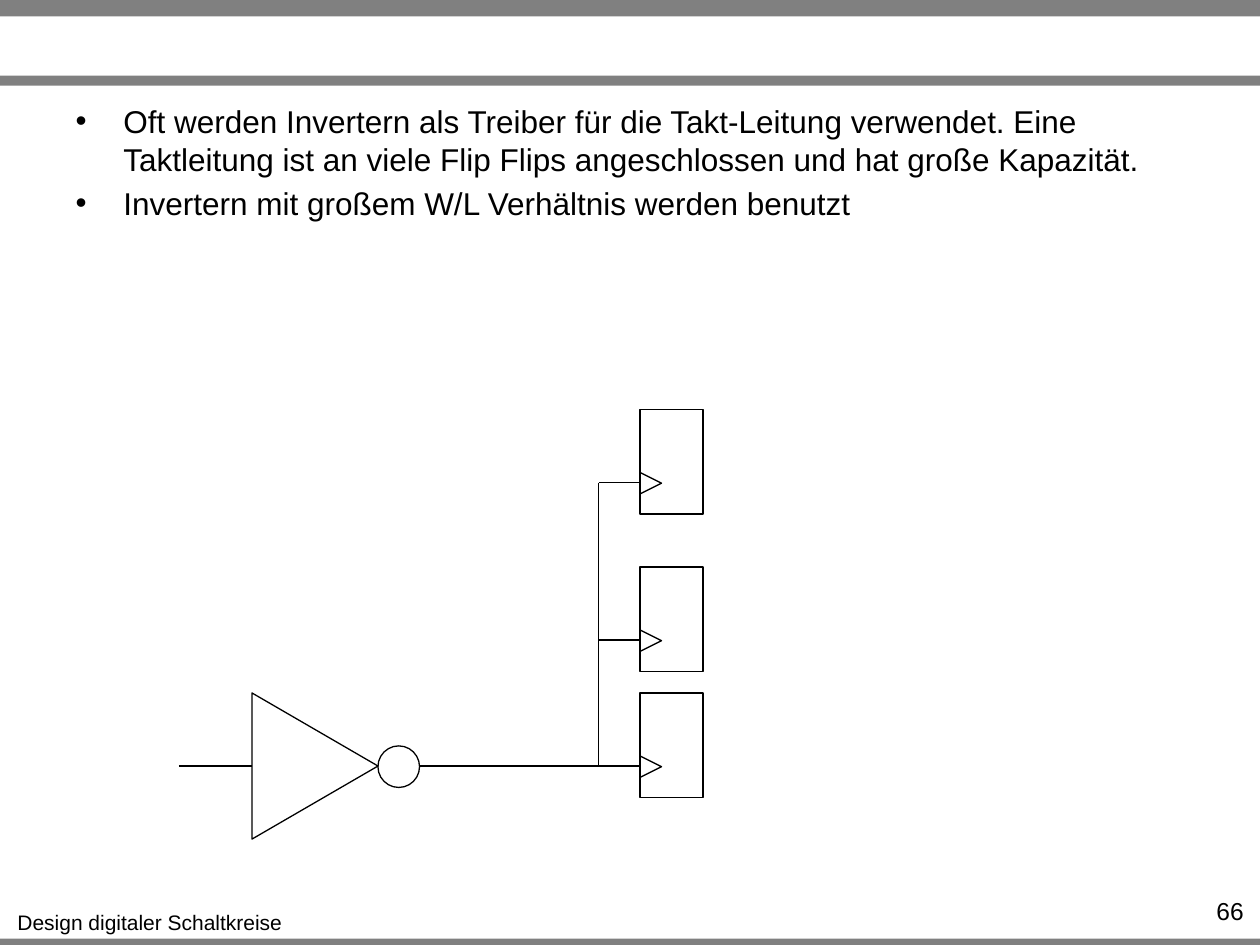
from dataclasses import dataclass

from lxml import etree
from pptx import Presentation
from pptx.dml.color import RGBColor
from pptx.enum.shapes import MSO_CONNECTOR, MSO_SHAPE
from pptx.enum.text import MSO_ANCHOR, MSO_AUTO_SIZE, PP_ALIGN
from pptx.oxml.ns import qn
from pptx.util import Inches, Pt

RECTANGLE, TRIANGLE, OVAL = MSO_SHAPE.RECTANGLE, MSO_SHAPE.ISOSCELES_TRIANGLE, MSO_SHAPE.OVAL
STRAIGHT = MSO_CONNECTOR.STRAIGHT
CENTER, RIGHT = PP_ALIGN.CENTER, PP_ALIGN.RIGHT
TOP = MSO_ANCHOR.TOP
NO_FIT = MSO_AUTO_SIZE.NONE


@dataclass(frozen=True)
class Theme:
    font: str = "Arial"
    ink: RGBColor = RGBColor(0, 0, 0)
    paper: RGBColor = RGBColor(255, 255, 255)
    bar: RGBColor = RGBColor(128, 128, 128)
    body: Pt = Pt(18)
    number: Pt = Pt(14)
    footer: Pt = Pt(12)
    stroke: Pt = Pt(0.75)


theme = Theme()


def add_outline(parent, kind, left, top, width, height, fill=None):
    outline = parent.add_shape(kind, Inches(left), Inches(top), Inches(width), Inches(height))
    outline.shadow.inherit = False
    outline.line.color.rgb = theme.ink
    outline.line.width = theme.stroke
    if fill is None:
        outline.fill.background()
    else:
        outline.fill.solid()
        outline.fill.fore_color.rgb = fill
    return outline


def add_wire(x1, y1, x2, y2):
    wire = slide.shapes.add_connector(STRAIGHT, Inches(x1), Inches(y1), Inches(x2), Inches(y2))
    wire.line.color.rgb = theme.ink
    wire.line.width = theme.stroke
    etree.SubElement(wire._element.spPr, qn("a:effectLst"))


prs = Presentation()
prs.slide_width, prs.slide_height = Inches(10), Inches(7.5)
slide = prs.slides.add_slide(prs.slide_layouts[1])
title = slide.shapes.title._element
title.getparent().remove(title)

for top, height in ((7.45, 0.08), (0, 0.13), (0.6, 0.08)):
    bar = add_outline(slide.shapes, RECTANGLE, 0, top, 10, height, theme.bar)
    bar.line.fill.background()

explanation = slide.placeholders[1]
explanation.left, explanation.top = Inches(0.5), Inches(0.76)
explanation.width, explanation.height = Inches(9), Inches(1.41)
explanation.text_frame.text = (
    "Oft werden Invertern als Treiber für die Takt-Leitung verwendet. Eine "
    "Taktleitung ist an viele Flip Flips angeschlossen und hat große Kapazität.\n"
    "Invertern mit großem W/L Verhältnis werden benutzt"
)
explanation.text_frame.auto_size = NO_FIT
explanation.text_frame.vertical_anchor = TOP
for point in explanation.text_frame.paragraphs:
    indents = point._p.get_or_add_pPr()
    indents.set("marL", str(Inches(0.38)))
    indents.set("indent", str(Inches(-0.38)))

course = slide.shapes.add_textbox(Inches(0.03), Inches(7.17), Inches(2.32), Inches(0.3))
course.text_frame.text = "Design digitaler Schaltkreise"
course.text_frame.word_wrap = False
course.text_frame.paragraphs[0].alignment = CENTER

page = slide.shapes.add_textbox(Inches(9.1), Inches(7.06), Inches(0.87), Inches(0.24))
page.text_frame.text = "66"
page.text_frame.word_wrap = True
page.text_frame.paragraphs[0].alignment = RIGHT

for wording, size in ((explanation, theme.body), (course, theme.footer), (page, theme.number)):
    for paragraph in wording.text_frame.paragraphs:
        for run in paragraph.runs:
            run.font.name = theme.font
            run.font.size = size
            run.font.color.rgb = theme.ink

clock_y, bus_x, flip_flop_x = 6.08, 4.75, 5.08
add_wire(1.42, clock_y, 2, clock_y)
add_wire(3, clock_y, 3.58, clock_y)
add_outline(slide.shapes, OVAL, 3, 5.92, 0.33, 0.33, theme.paper)
inverter = add_outline(slide.shapes, TRIANGLE, 1.92, 5.58, 1.16, 1)
inverter.rotation = 90
add_wire(3.58, clock_y, flip_flop_x, clock_y)

flip_flop_tops = (5.5, 4.5, 3.25)
for top in flip_flop_tops:
    flip_flop = slide.shapes.add_group_shape()
    add_outline(flip_flop.shapes, RECTANGLE, flip_flop_x, top, 0.5, 0.83)
    clock_input = add_outline(flip_flop.shapes, TRIANGLE, flip_flop_x, top + 0.5, 0.17, 0.17)
    clock_input.rotation = 90

for top in flip_flop_tops[1:]:
    add_wire(flip_flop_x, top + 0.58, bus_x, top + 0.58)
add_wire(bus_x, flip_flop_tops[-1] + 0.58, bus_x, clock_y)

prs.save("out.pptx")
